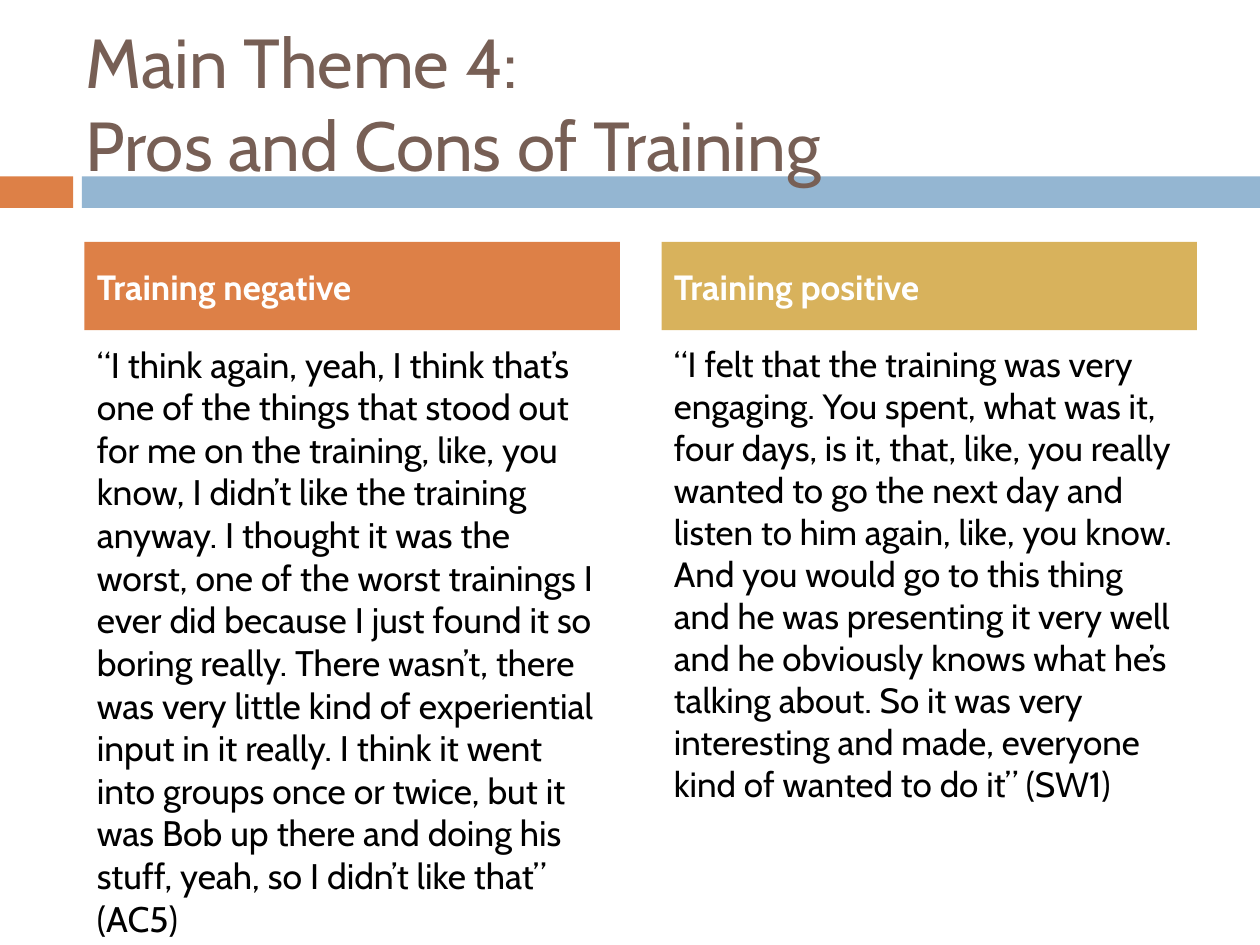
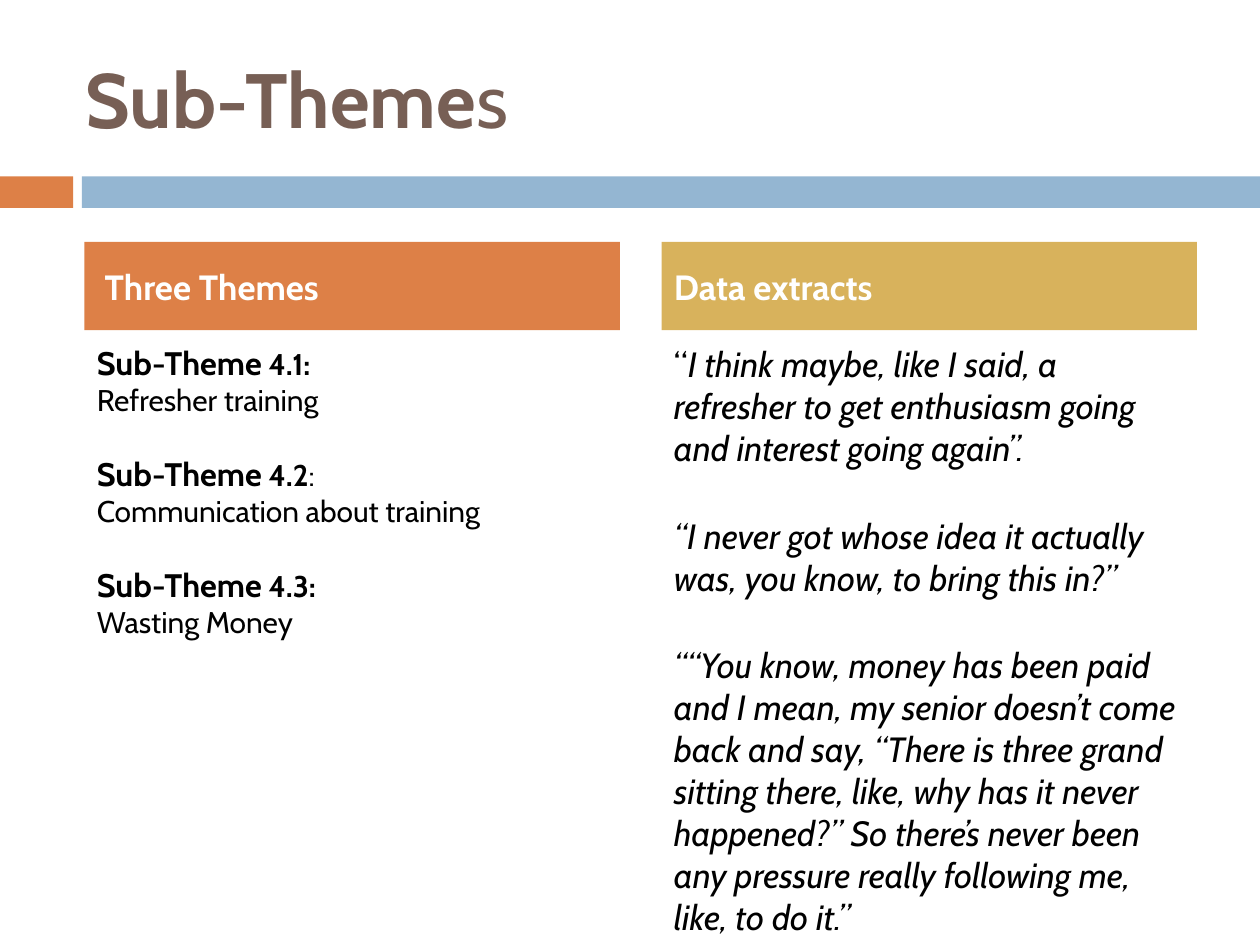
"""Build two slides on training themes: a title, a band and two headed columns each."""
from dataclasses import dataclass

from pptx import Presentation
from pptx.dml.color import RGBColor
from pptx.enum.shapes import MSO_SHAPE
from pptx.enum.text import MSO_ANCHOR, MSO_AUTO_SIZE, PP_ALIGN
from pptx.util import Emu, Pt

EMU_PER_PX = 9144


@dataclass(frozen=True)
class Theme:
    font: str = "Cabin"
    orange: str = "DD8047"
    blue: str = "94B6D2"
    gold: str = "D8B25C"
    brown: str = "775F55"
    white: str = "FFFFFF"
    black: str = "000000"
    title: float = 39.6
    large_title: float = 44
    body: float = 20
    long_body: float = 20.3
    label: float = 18.6
    detail: float = 17.1
    theme_gap: float = 20.6
    quote_gap: float = 26


THEME = Theme()


@dataclass(frozen=True)
class Area:
    left: int
    top: int
    width: int
    height: int


@dataclass(frozen=True)
class Span:
    text: str
    size: float = THEME.body
    bold: bool = False
    italic: bool = False


@dataclass(frozen=True)
class Para:
    spans: tuple[Span, ...]
    before: float = 0


@dataclass(frozen=True)
class Column:
    heading: str
    paras: list[Para]
    height: int = 392


@dataclass(frozen=True)
class Page:
    title: Para
    title_area: Area
    columns: tuple[Column, Column]


COLUMN_LEFTS = (67, 525)
COLUMN_COLOURS = (THEME.orange, THEME.gold)
COLUMN_WIDTH = 425
BANDS = (
    (Area(0, 140, 58, 25), THEME.orange),
    (Area(65, 140, 935, 25), THEME.blue),
)


def px(length: int) -> Emu:
    return Emu(length * EMU_PER_PX)


def place(area: Area) -> tuple[Emu, ...]:
    return px(area.left), px(area.top), px(area.width), px(area.height)


def add_block(slide, area: Area, colour: str):
    block = slide.shapes.add_shape(MSO_SHAPE.RECTANGLE, *place(area))
    block.shadow.inherit = False
    block.fill.solid()
    block.fill.fore_color.rgb = RGBColor.from_string(colour)
    block.line.fill.background()
    return block


def write(box, paras: list[Para], *, colour: str = THEME.black,
          anchor: MSO_ANCHOR = MSO_ANCHOR.TOP) -> None:
    frame = box.text_frame
    frame.word_wrap = True
    frame.auto_size = MSO_AUTO_SIZE.NONE
    frame.vertical_anchor = anchor
    for index, para in enumerate(paras):
        paragraph = frame.add_paragraph() if index else frame.paragraphs[0]
        paragraph.alignment = PP_ALIGN.LEFT
        paragraph.space_before = Pt(para.before)
        for span in para.spans:
            for number, line in enumerate(span.text.split("\n")):
                if number:
                    paragraph.add_line_break()
                run = paragraph.add_run()
                run.text = line
                run.font.name = THEME.font
                run.font.size = Pt(span.size)
                run.font.bold = span.bold
                run.font.italic = span.italic
                run.font.color.rgb = RGBColor.from_string(colour)


def add_text(slide, area: Area, paras: list[Para], **text_format) -> None:
    write(slide.shapes.add_textbox(*place(area)), paras, **text_format)


def add_column(slide, left: int, colour: str, column: Column) -> None:
    add_text(slide, Area(left, 267, COLUMN_WIDTH, column.height), column.paras)
    heading = add_block(slide, Area(left, 192, COLUMN_WIDTH, 70), colour)
    write(heading, [Para((Span(column.heading, bold=True),))],
          colour=THEME.white, anchor=MSO_ANCHOR.MIDDLE)


def add_page(deck, page: Page) -> None:
    slide = deck.slides.add_slide(deck.slide_layouts[6])
    for area, colour in BANDS:
        add_block(slide, area, colour)
    add_text(slide, page.title_area, [page.title],
             colour=THEME.brown, anchor=MSO_ANCHOR.MIDDLE)
    for left, colour, column in zip(COLUMN_LEFTS, COLUMN_COLOURS, page.columns):
        add_column(slide, left, colour, column)


def sub_theme(number: str, name: str, before: float = THEME.theme_gap,
              bold_colon: bool = True) -> list[Para]:
    label = Para((
        Span("Sub-Theme", THEME.label, bold=True),
        Span(f" {number}", THEME.detail, bold=True),
        Span(":", THEME.detail, bold=bold_colon),
    ), before)
    return [label, Para((Span(name, THEME.detail),))]


def quote(text: str) -> Para:
    return Para((Span(text, italic=True),), THEME.quote_gap)


NEGATIVE = (
    "“I think again, yeah, I think that’s one of the things that stood out for me on "
    "the training, like, you know, I didn’t like the training anyway. I thought it was "
    "the worst, one of the worst trainings I ever did because I just found it so boring "
    "really. There wasn’t, there was very little kind of experiential input in it "
    "really. I think it went into groups once or twice, but it was Bob up there and "
    "doing his stuff, yeah, so I didn’t like that” (AC5)"
)
POSITIVE = (
    "“I felt that the training was very engaging. You spent, what was it, four days, is "
    "it, that, like, you really wanted to go the next day and listen to him again, like, "
    "you know. And you would go to this thing and he was presenting it very well and he "
    "obviously knows what he’s talking about. So it was very interesting and made, "
    "everyone kind of wanted to do it” (SW1)"
)
EXTRACTS = [
    Para((
        Span("“"),
        Span("I think maybe, like I said, a refresher to get enthusiasm going and "
             "interest going again”.", italic=True),
    )),
    quote("“I never got whose idea it actually was, you know, to bring this in?”"),
    quote("““You know, money has been paid and I mean, my senior doesn’t come back and "
          "say, “There is three grand sitting there, like, why has it never happened?” "
          "So there’s never been any pressure really following me, like, to do it.”"),
]
SUB_THEMES = [
    *sub_theme("4.1", "Refresher training", before=0),
    *sub_theme("4.2", "Communication about training", bold_colon=False),
    *sub_theme("4.3", "Wasting Money"),
]
PAGES = (
    Page(
        Para((Span("Main Theme 4: \nPros and Cons of Training", THEME.title),)),
        Area(58, 19, 892, 124),
        (
            Column("Training negative", [Para((Span(NEGATIVE, THEME.long_body),))]),
            Column("Training positive", [Para((Span(POSITIVE),))]),
        ),
    ),
    Page(
        Para((Span("Sub-Theme", THEME.large_title, bold=True),
              Span("s", THEME.large_title))),
        Area(58, 30, 892, 95),
        (
            Column(" Three Themes", SUB_THEMES),
            Column("Data extracts", EXTRACTS, height=483),
        ),
    ),
)


def main() -> None:
    deck = Presentation()
    deck.slide_width, deck.slide_height = px(1000), px(750)
    for page in PAGES:
        add_page(deck, page)
    deck.save("out.pptx")


if __name__ == "__main__":
    main()
